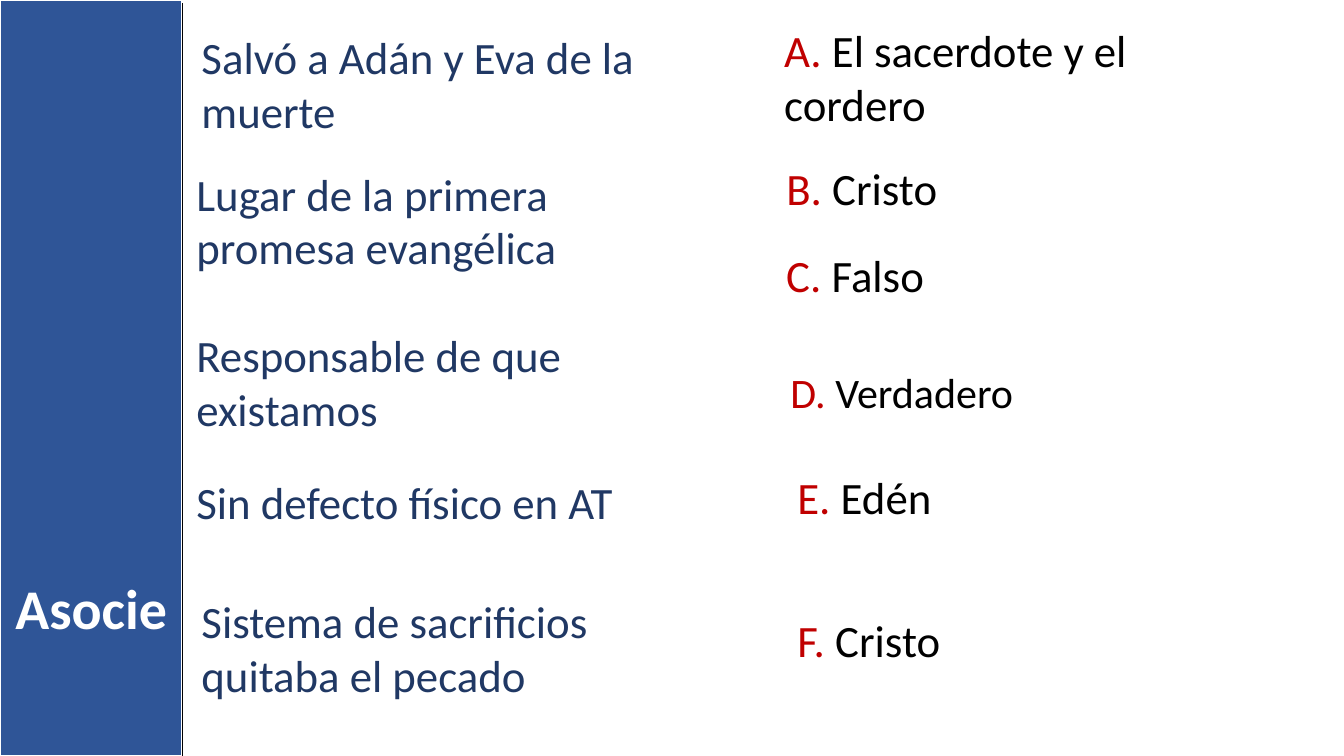
"""Build a matching exercise slide with prompts on the left and lettered answers on the right."""
from lxml.etree import SubElement
from pptx import Presentation
from pptx.dml.color import RGBColor
from pptx.enum.shapes import MSO_CONNECTOR, MSO_SHAPE
from pptx.enum.text import MSO_ANCHOR, MSO_AUTO_SIZE, PP_ALIGN
from pptx.oxml.ns import qn
from pptx.util import Inches, Pt


def color(value):
    return RGBColor.from_string(value)


def write(shape, runs, size, bold=False, alignment=PP_ALIGN.LEFT):
    frame = shape.text_frame
    frame.word_wrap = True
    frame.auto_size = MSO_AUTO_SIZE.SHAPE_TO_FIT_TEXT
    frame.vertical_anchor = MSO_ANCHOR.TOP
    paragraph = frame.paragraphs[0]
    paragraph.alignment = alignment
    for text, run_color in runs:
        run = paragraph.add_run()
        run.text = text
        run.font.name = "Calibri"
        run.font.size = Pt(size)
        run.font.bold = bold
        run.font.color.rgb = color(run_color)


presentation = Presentation()
presentation.slide_width = Inches(13.33)
presentation.slide_height = Inches(7.5)
slide = presentation.slides.add_slide(presentation.slide_layouts[5])
shapes = slide.shapes

bar_width = Inches(1.81)
one_line, two_lines = 0.64, 1.18

bar = shapes.add_shape(MSO_SHAPE.RECTANGLE, 0, 0, bar_width, presentation.slide_height)
bar.shadow.inherit = False
bar.fill.solid()
bar.fill.fore_color.rgb = color("2F5597")
bar.line.color.rgb = color("FFFFFF")
bar.line.width = Pt(1.5)

prompts = [
    ("Salvó a Adán y Eva de la muerte", 1.9, 0.25, 5.39, two_lines),
    ("Lugar de la primera promesa evangélica", 1.85, 1.6, 5.16, two_lines),
    ("Responsable de que existamos", 1.85, 3.2, 5.1, two_lines),
    ("Sin defecto físico en AT", 1.85, 4.66, 4.94, one_line),
    ("Sistema de sacrificios quitaba el pecado", 1.9, 5.84, 5.16, two_lines),
]
for text, *bounds in prompts:
    prompt = shapes.add_textbox(*map(Inches, bounds))
    write(prompt, [(text, "203864")], 32)

answers = [
    ("El sacerdote y el cordero", 32, 7.68, 0.18, 5, two_lines),
    ("Cristo", 32, 7.7, 1.55, 4.68, one_line),
    ("Falso", 32, 7.7, 2.41, 4.73, one_line),
    ("Verdadero", 30, 7.74, 3.59, 4.75, 0.61),
    ("Edén", 32, 7.81, 4.61, 4.91, one_line),
    ("Cristo", 32, 7.81, 6.03, 4.62, one_line),
]
for letter, (text, size, *bounds) in zip("ABCDEF", answers):
    answer = shapes.add_textbox(*map(Inches, bounds))
    write(answer, [(f"{letter}. ", "C00000"), (text, "000000")], size)

title = shapes.title
title.left, title.top = 0, Inches(5.64)
title.width, title.height = bar_width, Inches(0.77)
write(title, [("Asocie", "FFFFFF")], 40, bold=True, alignment=PP_ALIGN.CENTER)
bar.element.addnext(title.element)

edge = shapes.add_connector(
    MSO_CONNECTOR.STRAIGHT, bar_width, Inches(0.03), bar_width, presentation.slide_height
)
edge.line.color.rgb = color("000000")
edge.line.width = Pt(1)
SubElement(edge.element.spPr, qn("a:effectLst"))

presentation.save("out.pptx")
